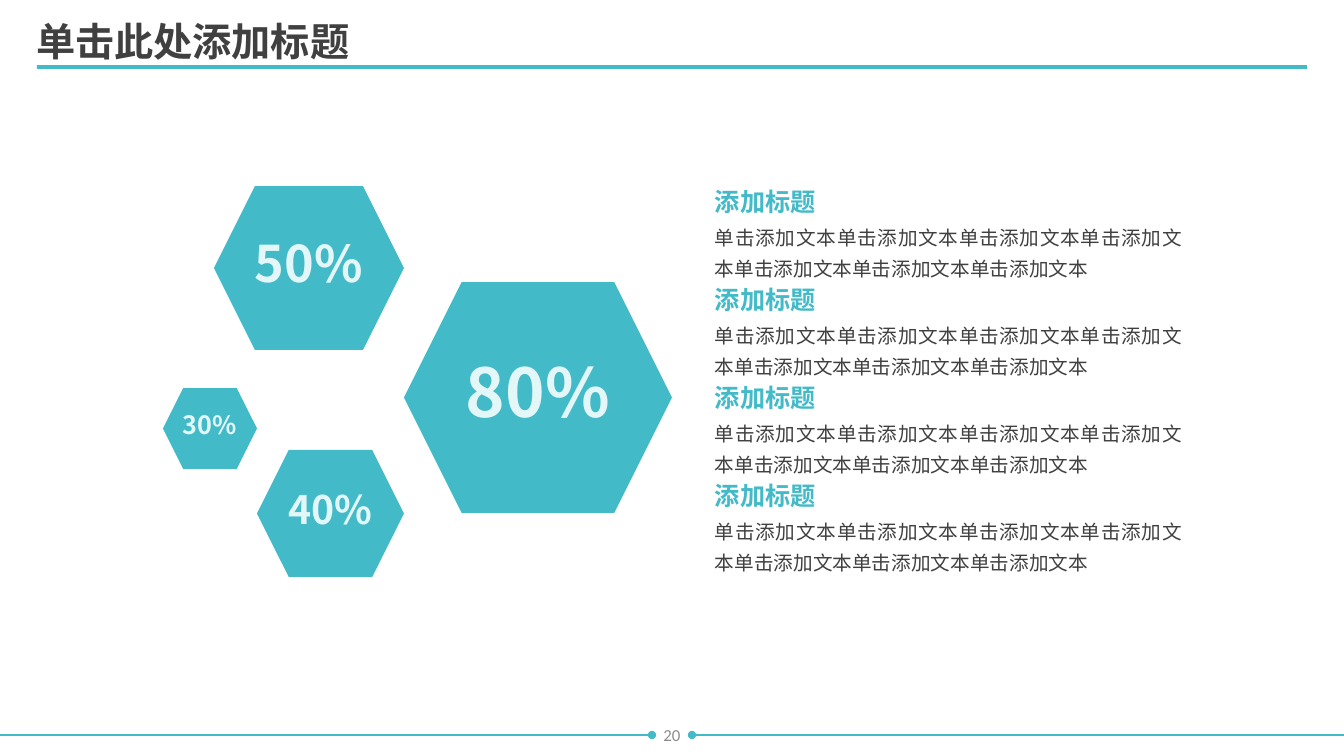
import pptx
import pptx.util
import pptx.dml.color
import pptx.enum.shapes
import pptx.enum.text
import pptx.oxml.ns
from lxml import etree

PX = 914400 / 100.8
CJK = "Noto Sans CJK SC"
TEAL, DARK, PALE, GREY = "42BAC8", "404040", "E4F7F8", "8C8C8C"
MSO = pptx.enum.shapes.MSO_SHAPE
ALIGN = pptx.enum.text.PP_ALIGN
ANCHOR = pptx.enum.text.MSO_ANCHOR
FIT = pptx.enum.text.MSO_AUTO_SIZE.SHAPE_TO_FIT_TEXT
qn = pptx.oxml.ns.qn


def rgb(value):
    return pptx.dml.color.RGBColor.from_string(value)


def write(tf, text, size, color, frame, para, bold=False, face=CJK):
    for name, value in {"word_wrap": True, **frame}.items():
        setattr(tf, name, value)
    p = tf.paragraphs[0]
    for name, value in para.items():
        setattr(p, name, value)
    r = p.add_run()
    r.text = text
    for name, value in {"size": pptx.util.Pt(size), "bold": bold, "name": face}.items():
        setattr(r.font, name, value)
    r.font.color.rgb = rgb(color)
    latin = r.font._element.find(qn("a:latin"))
    latin.addnext(latin.makeelement(qn("a:ea"), {"typeface": face}))


prs = pptx.Presentation()
prs.slide_width, prs.slide_height = round(1344 * PX), round(756 * PX)
s = prs.slides.add_slide(prs.slide_layouts[5])

title = s.shapes.title
title_box = {"left": 26, "top": 18, "width": 762, "height": 52}
for name, value in title_box.items():
    setattr(title, name, round(value * PX))
write(title.text_frame, "单击此处添加标题", 28, DARK,
      {"auto_size": FIT, "vertical_anchor": ANCHOR.TOP},
      {"alignment": ALIGN.LEFT, "line_spacing": 0.9}, bold=True)

rule = (MSO.RECTANGLE, 37, 65, 1270, 4, "", 0)
hexagons = [
    (MSO.HEXAGON, 163, 388, 94, 81, "30%", 18),
    (MSO.HEXAGON, 257, 450, 147, 127, "40%", 28),
    (MSO.HEXAGON, 404, 282, 268, 231, "80%", 48),
    (MSO.HEXAGON, 214, 186, 190, 164, "50%", 36),
]
label_frame = {
    "word_wrap": False, "vertical_anchor": ANCHOR.MIDDLE,
    "margin_left": 0, "margin_right": 0, "margin_top": 0, "margin_bottom": round(4 * PX),
}
for kind, x, y, w, h, label, size in [rule, *hexagons]:
    sp = s.shapes.add_shape(kind, *[round(v * PX) for v in (x, y, w, h)])
    sp.shadow.inherit = False
    sp.fill.solid()
    sp.fill.fore_color.rgb = rgb(TEAL)
    sp.line.fill.background()
    if label:
        write(sp.text_frame, label, size, PALE, label_frame,
              {"alignment": ALIGN.CENTER, "line_spacing": 0.9}, bold=True)

heading_style = {"alignment": ALIGN.JUSTIFY, "line_spacing": 0.9}
body_style = {"alignment": ALIGN.JUSTIFY, "line_spacing": 1.3}
for i in range(4):
    top = 185 + 98 * i
    for text, y, w, h, size, color, para, bold in [
        ("添加标题", top, 256, 37, 18, TEAL, heading_style, True),
        ("单击添加文本" * 7, top + 29, 487, 72, 14, DARK, body_style, False),
    ]:
        sp = s.shapes.add_textbox(*[round(v * PX) for v in (705, y, w, h)])
        write(sp.text_frame, text, size, color, {"auto_size": FIT}, para, bold)

for start, end in [(0, 652), (1344, 692)]:
    line = s.shapes.add_connector(
        pptx.enum.shapes.MSO_CONNECTOR.STRAIGHT,
        *[round(v * PX) for v in (start, 735, end, 735)])
    line.line.color.rgb = rgb(TEAL)
    line.line.width = pptx.util.Pt(1)
    etree.SubElement(line.line._get_or_add_ln(), qn("a:tailEnd"), type="oval")
    etree.SubElement(line._element.spPr, qn("a:effectLst"))

sp = s.shapes.add_textbox(*[round(v * PX) for v in (521, 715, 302, 40)])
write(sp.text_frame, "20", 12, GREY, {"vertical_anchor": ANCHOR.MIDDLE},
      {"alignment": ALIGN.CENTER}, face="Calibri")

prs.save("out.pptx")
